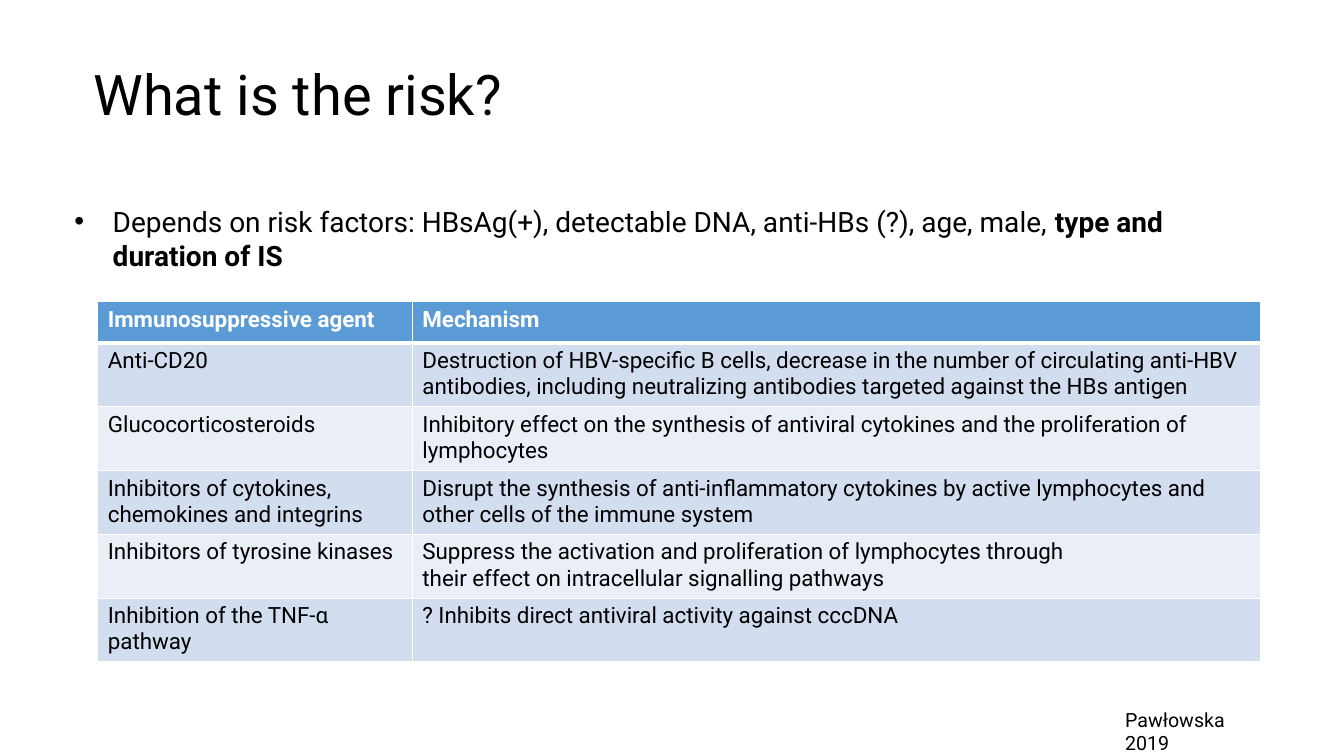
from lxml import etree
from pptx import Presentation
from pptx.dml.color import RGBColor
from pptx.enum.text import MSO_ANCHOR
from pptx.oxml.ns import qn
from pptx.util import Inches, Pt

TOP = MSO_ANCHOR.TOP

COLORS = {
    "text": "000000",
    "white": "FFFFFF",
    "header": "5B9BD5",
    "band_dark": "D2DEEF",
    "band_light": "EAEFF7",
}

AGENTS = [
    ("Immunosuppressive agent", "Mechanism"),
    ("Anti-CD20",
     "Destruction of HBV-specific B cells, decrease in the number of circulating "
     "anti-HBV antibodies, including neutralizing antibodies targeted against the "
     "HBs antigen"),
    ("Glucocorticosteroids",
     "Inhibitory effect on the synthesis of antiviral cytokines and the "
     "proliferation of lymphocytes"),
    ("Inhibitors of cytokines, chemokines and integrins",
     "Disrupt the synthesis of anti-inflammatory cytokines by active lymphocytes "
     "and other cells of the immune system"),
    ("Inhibitors of tyrosine kinases",
     "Suppress the activation and proliferation of lymphocytes through\n"
     "their effect on intracellular signalling pathways"),
    ("Inhibition of the TNF-α pathway",
     "? Inhibits direct antiviral activity against cccDNA"),
]


class RiskSlide:
    """Holds the slide and its style."""

    font_name = "Roboto"

    def __init__(self, presentation):
        self.slide = presentation.slides.add_slide(presentation.slide_layouts[6])

    def format_runs(self, text_frame, size, color="text", bold=False):
        for paragraph in text_frame.paragraphs:
            for run in paragraph.runs:
                run.font.name = self.font_name
                run.font.size = Pt(size)
                run.font.bold = bold
                run.font.color.rgb = RGBColor.from_string(COLORS[color])

    def add_text(self, text, left, top, width, height, size):
        box = self.slide.shapes.add_textbox(
            Inches(left), Inches(top), Inches(width), Inches(height))
        text_frame = box.text_frame
        text_frame.word_wrap = True
        text_frame.vertical_anchor = TOP
        text_frame.text = text
        self.format_runs(text_frame, size)
        return text_frame.paragraphs[0]

    def add_bullet(self, paragraph, indent):
        properties = paragraph._p.get_or_add_pPr()
        properties.set("marL", str(Inches(indent)))
        properties.set("indent", str(-Inches(indent)))
        etree.SubElement(properties, qn("a:buFont"), typeface="Arial")
        etree.SubElement(properties, qn("a:buChar"), char="•")

    def add_borders(self, cell, bottom_width):
        properties = cell._tc.get_or_add_tcPr()
        widths = {"a:lnL": 1, "a:lnR": 1, "a:lnT": 1, "a:lnB": bottom_width}
        # Borders come before the fill in the cell properties
        for position, (tag, width) in enumerate(widths.items()):
            line = etree.Element(qn(tag), w=str(Pt(width)))
            fill = etree.SubElement(line, qn("a:solidFill"))
            etree.SubElement(fill, qn("a:srgbClr"), val=COLORS["white"])
            properties.insert(position, line)

    def add_table(self, rows, left, top, column_widths, row_height, size):
        table = self.slide.shapes.add_table(
            len(rows), len(column_widths), Inches(left), Inches(top),
            Inches(sum(column_widths)), Inches(row_height * len(rows))).table
        for column, width in zip(table.columns, column_widths):
            column.width = Inches(width)
        for row_index, texts in enumerate(rows):
            is_header = row_index == 0
            band = "band_dark" if row_index % 2 else "band_light"
            for column_index, text in enumerate(texts):
                cell = table.cell(row_index, column_index)
                cell.text_frame.text = text
                self.format_runs(cell.text_frame, size,
                                 "white" if is_header else "text", is_header)
                cell.fill.solid()
                cell.fill.fore_color.rgb = RGBColor.from_string(
                    COLORS["header" if is_header else band])
                self.add_borders(cell, 3 if is_header else 1)


def main():
    presentation = Presentation()
    presentation.slide_width = Inches(13.33)
    presentation.slide_height = Inches(7.5)
    risk = RiskSlide(presentation)

    # Title
    title = risk.add_text("What is the risk?", 0.83, 0.62, 11.67, 0.9, 40)
    title.line_spacing = 0.9
    title.space_before = Pt(10)

    # Source reference
    risk.add_text("Pawłowska 2019", 11.06, 6.97, 1.61, 0.34, 14)

    # Risk factors, with the key factor in bold
    factors = risk.add_text(
        "Depends on risk factors: HBsAg(+), detectable DNA, anti-HBs (?), age, male, ",
        0.64, 1.98, 11.86, 0.77, 20)
    key_factor = factors.add_run()
    key_factor.text = "type and duration of IS"
    key_factor.font.name = risk.font_name
    key_factor.font.size = Pt(20)
    key_factor.font.bold = True
    key_factor.font.color.rgb = RGBColor.from_string(COLORS["text"])
    risk.add_bullet(factors, 0.38)

    # Agents and their mechanisms
    risk.add_table(AGENTS, 0.97, 2.99, (3.12, 8.41), 0.41, 16)

    presentation.save("out.pptx")


if __name__ == "__main__":
    main()
